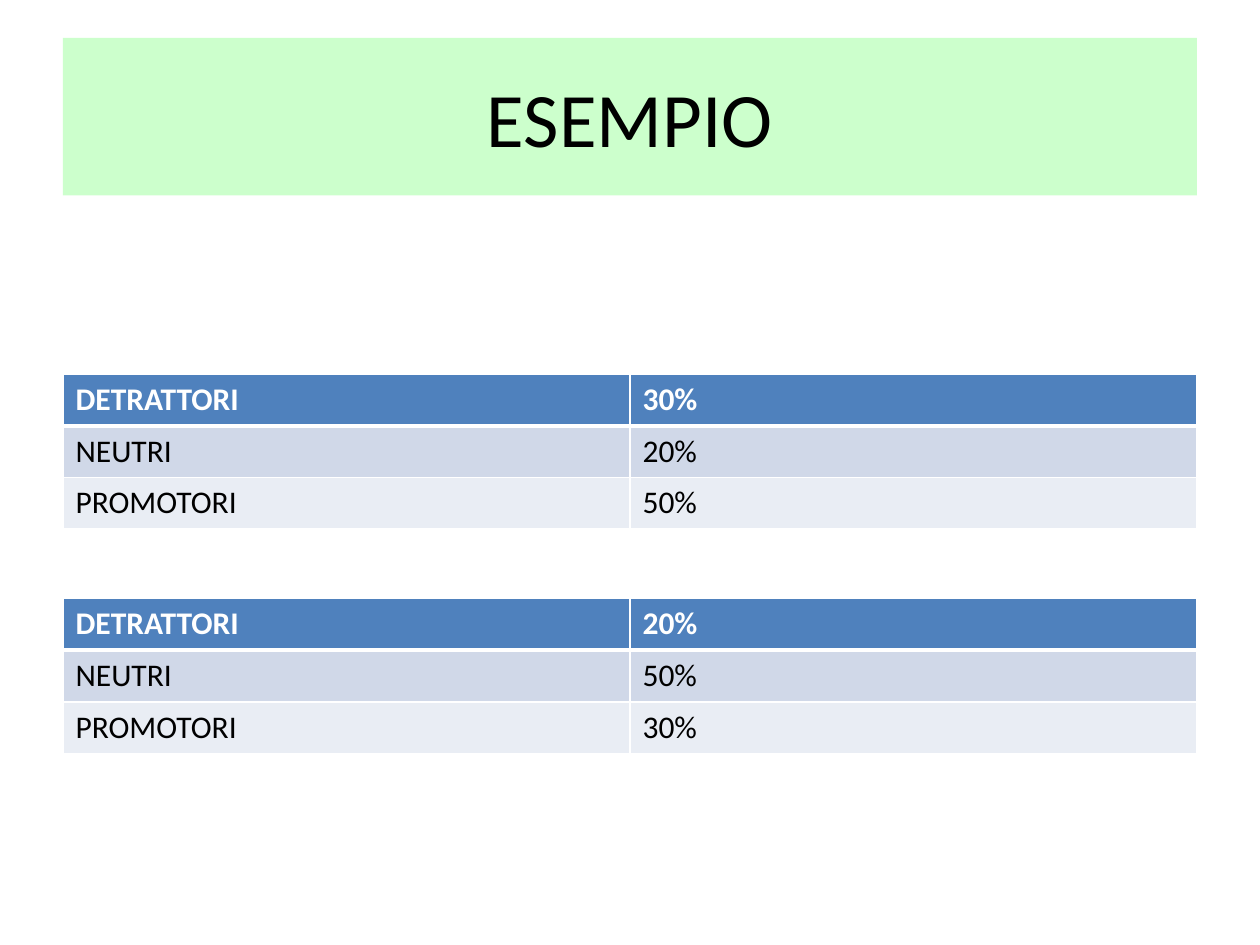
from dataclasses import dataclass

import lxml.etree
import pptx
import pptx.dml.color
import pptx.enum.shapes
import pptx.enum.text
import pptx.oxml.ns
import pptx.util
from pptx.util import Inches

FONT = "Calibri"
WHITE, BLACK = "FFFFFF", "000000"
FILLS = ("4F81BD", "D0D8E8", "E9EDF4")
NAMES = ("DETRATTORI", "NEUTRI", "PROMOTORI")
LEFT, WIDTH, ROW = 0.5, 9, 0.41


@dataclass
class Score:
    top: float
    rates: tuple[str, ...]


SCORES = (
    Score(2.97, ("30%", "20%", "50%")),
    Score(4.75, ("20%", "50%", "30%")),
)


def paint(fill, color: str) -> None:
    fill.solid()
    fill.fore_color.rgb = pptx.dml.color.RGBColor.from_string(color)


def write(frame, text: str, size: int, color: str, bold: bool = False) -> None:
    frame.text = text
    font = frame.paragraphs[0].runs[0].font
    font.name, font.size, font.bold = FONT, pptx.util.Pt(size), bold
    paint(font.fill, color)


def edge(cell, side: str, width: float) -> None:
    qn = pptx.oxml.ns.qn
    line = lxml.etree.SubElement(
        cell._tc.get_or_add_tcPr(), qn(f"a:ln{side}"), w=str(pptx.util.Pt(width))
    )
    fill = lxml.etree.SubElement(line, qn("a:solidFill"))
    lxml.etree.SubElement(fill, qn("a:srgbClr"), val=WHITE)


def add_title(slide, text: str) -> None:
    box = slide.shapes.add_shape(
        pptx.enum.shapes.MSO_SHAPE.RECTANGLE,
        Inches(LEFT), Inches(0.3), Inches(WIDTH), Inches(1.25),
    )
    box.shadow.inherit = False
    paint(box.fill, "CCFFCC")
    box.line.fill.background()
    frame = box.text_frame
    frame.vertical_anchor = pptx.enum.text.MSO_ANCHOR.MIDDLE
    write(frame, text, 44, BLACK)
    frame.paragraphs[0].alignment = pptx.enum.text.PP_ALIGN.CENTER


def add_score(slide, score: Score) -> None:
    grid = slide.shapes.add_table(
        len(NAMES), 2, Inches(LEFT), Inches(score.top),
        Inches(WIDTH), Inches(ROW * len(NAMES)),
    ).table
    for row, texts in enumerate(zip(NAMES, score.rates)):
        head = row == 0
        # A thick rule parts the header from the body
        widths = {"L": 1, "R": 1, "T": 3 if row == 1 else 1, "B": 3 if head else 1}
        for col, text in enumerate(texts):
            cell = grid.cell(row, col)
            for side, width in widths.items():
                edge(cell, side, width)
            paint(cell.fill, FILLS[row])
            write(cell.text_frame, text, 18, WHITE if head else BLACK, head)


def main() -> None:
    deck = pptx.Presentation()
    deck.slide_width, deck.slide_height = Inches(10), Inches(7.5)
    slide = deck.slides.add_slide(deck.slide_layouts[6])

    # Title band
    add_title(slide, "ESEMPIO")

    # Score tables
    for score in SCORES:
        add_score(slide, score)

    deck.save("out.pptx")


if __name__ == "__main__":
    main()
